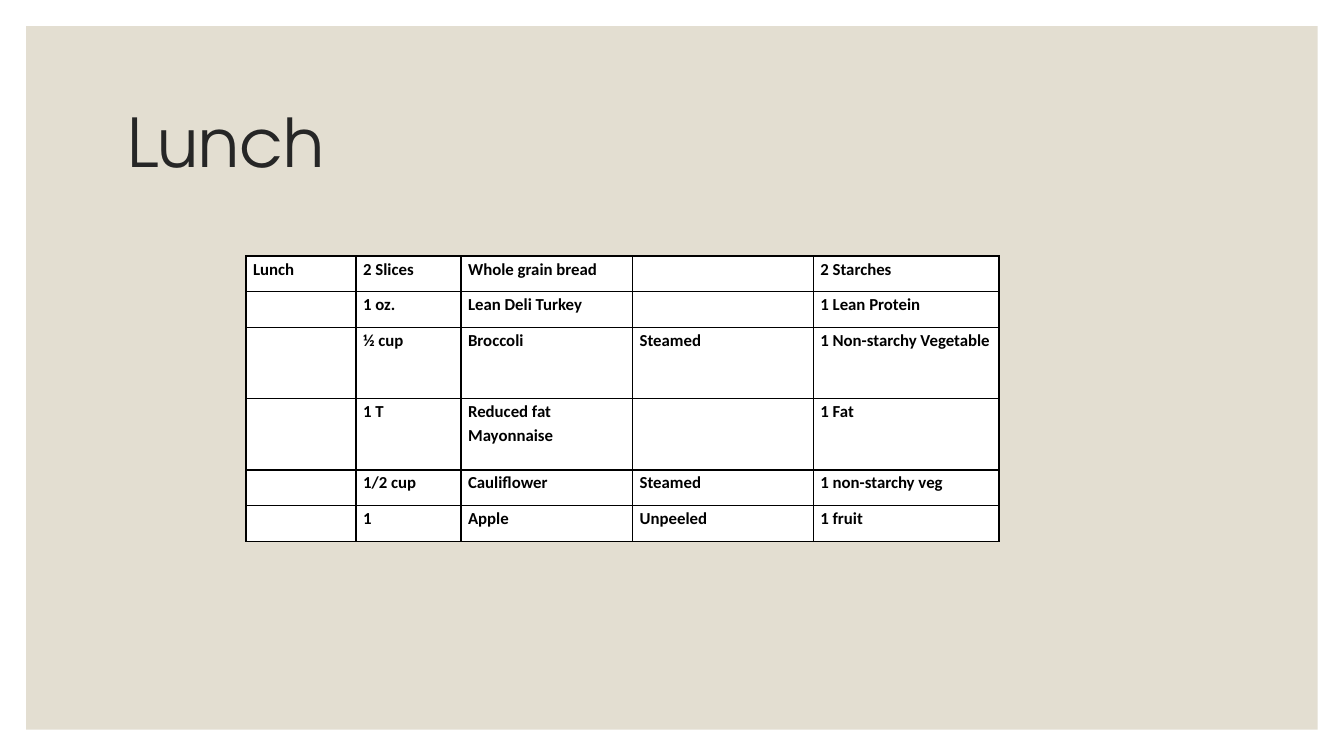
from lxml import etree
from pptx import Presentation
from pptx import util as u
from pptx.dml.color import RGBColor
from pptx.enum import shapes, text
from pptx.oxml import ns

WHITE = RGBColor(0xFF, 0xFF, 0xFF)
SAND = RGBColor(0xE3, 0xDE, 0xD1)
CHARCOAL = RGBColor(0x26, 0x26, 0x26)
BLACK = RGBColor(0, 0, 0)

SLIDE_WIDTH, SLIDE_HEIGHT = 13.33, 7.5
MARGIN = 0.26
TITLE_BOX = (1.17, 0.7, 11, 1.5)
TABLE_BOX = (2.44, 2.54, 7.47, 2.83)
COLUMN_WEIGHTS = (1.09, 1.04, 1.7, 1.79, 1.84)
ROW_WEIGHTS = (1, 1, 2, 2, 1, 1)
MEALS = (
    ("Lunch", "2 Slices", "Whole grain bread", "", "2 Starches"),
    ("", "1 oz.", "Lean Deli Turkey", "", "1 Lean Protein"),
    ("", "½ cup", "Broccoli", "Steamed", "1 Non-starchy Vegetable"),
    ("", "1 T", "Reduced fat Mayonnaise", "", "1 Fat"),
    ("", "1/2 cup", "Cauliflower", "Steamed", "1 non-starchy veg"),
    ("", "1", "Apple", "Unpeeled", "1 fruit"),
)


def add_run(paragraph, words, font_name, size, color, bold=False):
    """Add one formatted run to a paragraph."""
    run = paragraph.add_run()
    run.text = words
    run.font.name = font_name
    run.font.size = u.Pt(size)
    run.font.bold = bold
    run.font.color.rgb = color


def add_backdrop(slide, box):
    """Fill the box with the sand-coloured panel."""
    panel = slide.shapes.add_shape(shapes.MSO_SHAPE.RECTANGLE, *map(u.Inches, box))
    panel.shadow.inherit = False
    panel.fill.solid()
    panel.fill.fore_color.rgb = SAND
    panel.line.fill.background()


def add_title(slide, box, words):
    """Place the title, vertically centred in the box."""
    frame = slide.shapes.add_textbox(*map(u.Inches, box)).text_frame
    frame.word_wrap = True
    frame.vertical_anchor = text.MSO_ANCHOR.MIDDLE
    paragraph = frame.paragraphs[0]
    paragraph.line_spacing = 0.9
    add_run(paragraph, words, "TeX Gyre Adventor", 48, CHARCOAL)


def add_borders(cell, color, points):
    """Draw a solid line on all four sides of a cell."""
    properties = cell._tc.get_or_add_tcPr()
    for side in ("lnL", "lnR", "lnT", "lnB"):
        line = etree.SubElement(properties, ns.qn(f"a:{side}"), w=str(u.Pt(points)))
        fill = etree.SubElement(line, ns.qn("a:solidFill"))
        etree.SubElement(fill, ns.qn("a:srgbClr"), val=str(color))


def fill_cell(cell, words):
    """Style one cell and write its words."""
    cell.margin_left = cell.margin_right = u.Inches(0.07)
    cell.margin_top = cell.margin_bottom = 0
    add_borders(cell, BLACK, 1)
    cell.fill.solid()
    cell.fill.fore_color.rgb = WHITE
    if words:
        paragraph = cell.text_frame.paragraphs[0]
        paragraph.line_spacing = 1.15
        add_run(paragraph, words, "Calibri", 12, BLACK, bold=True)


def add_meal_table(slide, box, meals):
    """Build the meal table, sharing the box out by column and row weights."""
    width, height = box[2:]
    frame = slide.shapes.add_table(len(meals), len(meals[0]), *map(u.Inches, box))
    table = frame.table
    table.first_row = table.horz_banding = False
    for column, weight in zip(table.columns, COLUMN_WEIGHTS):
        column.width = u.Inches(width * weight / sum(COLUMN_WEIGHTS))
    for row, weight, meal in zip(table.rows, ROW_WEIGHTS, meals):
        row.height = u.Inches(height * weight / sum(ROW_WEIGHTS))
        for cell, words in zip(row.cells, meal):
            fill_cell(cell, words)


def add_lunch_slide(presentation):
    """Add the lunch slide with its panel, title and table."""
    slide = presentation.slides.add_slide(presentation.slide_layouts[6])
    slide.background.fill.solid()
    slide.background.fill.fore_color.rgb = WHITE
    add_backdrop(slide, (MARGIN, MARGIN, SLIDE_WIDTH - 2 * MARGIN, SLIDE_HEIGHT - 2 * MARGIN))
    add_title(slide, TITLE_BOX, "Lunch")
    add_meal_table(slide, TABLE_BOX, MEALS)


def main():
    """Create and save the presentation."""
    presentation = Presentation()
    presentation.slide_width = u.Inches(SLIDE_WIDTH)
    presentation.slide_height = u.Inches(SLIDE_HEIGHT)
    add_lunch_slide(presentation)
    presentation.save("out.pptx")


if __name__ == "__main__":
    main()
